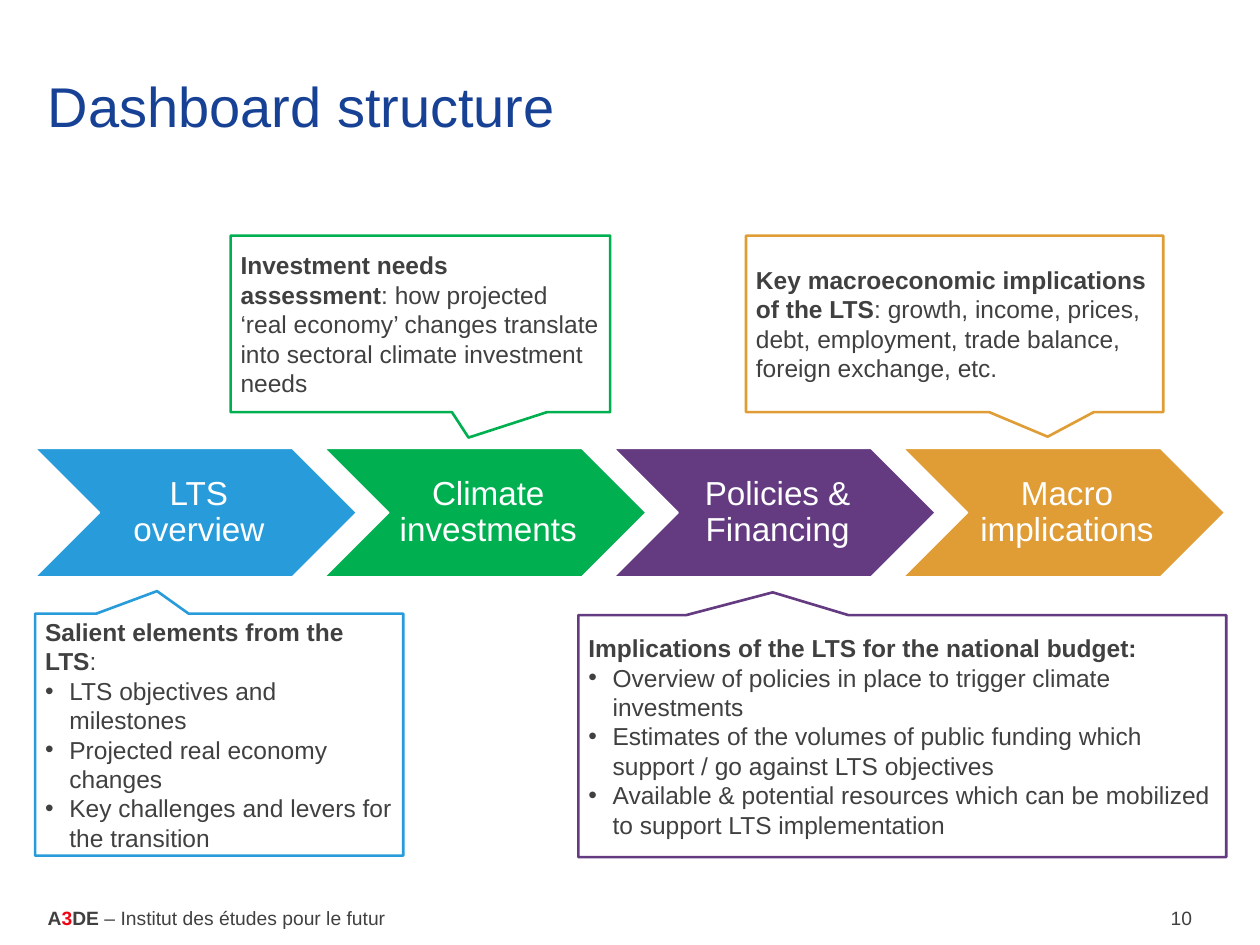
from lxml.etree import SubElement
from pptx import Presentation
from pptx.dml.color import RGBColor
from pptx.enum.shapes import MSO_SHAPE
from pptx.enum.text import MSO_ANCHOR, PP_ALIGN
from pptx.oxml.ns import qn
from pptx.util import Cm, Pt

COLORS = {
    "title": "174195", "text": "404041", "red": "EE0612", "white": "FFFFFF",
    "blue": "289CDB", "green": "00B050", "purple": "643A81", "gold": "E09C35",
}

STEPS = [
    ("LTS overview", "blue"),
    ("Climate investments", "green"),
    ("Policies & Financing", "purple"),
    ("Macro implications", "gold"),
]

# Box (cm), tail offsets, colour, bold lead, plain rest, bullets
NOTES = [
    ((0.71, 12.37, 7.42, 4.88), (-0.169, -0.593), "blue",
     "Salient elements from the LTS", ":",
     ["LTS objectives and milestones",
      "Projected real economy changes",
      "Key challenges and levers for the transition"]),
    ((4.65, 4.75, 7.65, 3.56), (0.127, 0.644), "green",
     "Investment needs assessment",
     ": how projected ‘real economy’ changes translate into sectoral "
     "climate investment needs", []),
    ((15.04, 4.75, 8.41, 3.56), (0.223, 0.639), "gold",
     "Key macroeconomic implications of the LTS",
     ": growth, income, prices, debt, employment, trade balance, "
     "foreign exchange, etc.", []),
    ((11.66, 12.4, 13.06, 4.88), (-0.2, -0.594), "purple",
     "Implications of the LTS for the national budget:", "",
     ["Overview of policies in place to trigger climate investments",
      "Estimates of the volumes of public funding which support / go "
      "against LTS objectives",
      "Available & potential resources which can be mobilized to support "
      "LTS implementation"]),
]


def color(name):
    return RGBColor.from_string(COLORS[name])


def style(run, size, tint="text", bold=False):
    font = run.font
    font.name, font.size, font.bold = "Arial", Pt(size), bold
    font.color.rgb = color(tint)


def add_part(par, text, *look):
    run = par.add_run()
    run.text = text
    style(run, *look)


def set_frame(frame, anchor, pads=None):
    frame.word_wrap = True
    frame.vertical_anchor = anchor
    if pads:
        (frame.margin_left, frame.margin_top,
         frame.margin_right, frame.margin_bottom) = map(Cm, pads)


def add_label(slide, box, anchor=MSO_ANCHOR.MIDDLE):
    frame = slide.shapes.add_textbox(*map(Cm, box)).text_frame
    set_frame(frame, anchor)
    return frame.paragraphs[0]


def add_bullet(par):
    props = par._p.get_or_add_pPr()
    props.set("marL", str(Cm(0.49)))
    props.set("indent", str(-Cm(0.49)))
    SubElement(props, qn("a:buFont"), typeface="Arial")
    SubElement(props, qn("a:buChar"), char="•")


def draw_title(slide, box):
    add_part(add_label(slide, box), "Dashboard structure", 32, "title")


def draw_steps(slide, box):
    left, top, width, height = box
    wide = 6.48
    pitch = (width - wide) / (len(STEPS) - 1)
    for i, (text, tint) in enumerate(STEPS):
        step = slide.shapes.add_shape(
            MSO_SHAPE.CHEVRON, Cm(left + i * pitch), Cm(top),
            Cm(wide), Cm(height))
        step.shadow.inherit = False
        step.fill.solid()
        step.fill.fore_color.rgb = color(tint)
        step.line.color.rgb = color("white")
        step.line.width = Pt(0.85)
        frame = step.text_frame
        set_frame(frame, MSO_ANCHOR.MIDDLE, (0.2, 0.08, 0.08, 0.08))
        frame.text = text
        par = frame.paragraphs[0]
        par.alignment = PP_ALIGN.CENTER
        par.line_spacing = 0.9
        style(par.runs[0], 19, "white")


def draw_note(slide, box, tail, tint, lead, rest, points):
    note = slide.shapes.add_shape(
        MSO_SHAPE.RECTANGULAR_CALLOUT, *map(Cm, box))
    note.adjustments[0], note.adjustments[1] = tail
    note.shadow.inherit = False
    note.fill.background()
    note.line.color.rgb = color(tint)
    note.line.width = Pt(1.5)
    frame = note.text_frame
    set_frame(frame, MSO_ANCHOR.MIDDLE, (0.2,) * 4)
    par = frame.paragraphs[0]
    par.alignment = PP_ALIGN.LEFT
    add_part(par, lead, 14, "text", True)
    if rest:
        add_part(par, rest, 14)
    for point in points:
        par = frame.add_paragraph()
        par.text = point
        par.alignment = PP_ALIGN.LEFT
        add_bullet(par)
        style(par.runs[0], 14)


def draw_footer(slide, box):
    left, top, width, height = box
    name = add_label(slide, (left, top, 8.61, height), MSO_ANCHOR.TOP)
    for text, tint, bold in [
            ("A", "text", True), ("3", "red", True), ("DE ", "text", True),
            ("– Institut des études pour le futur", "text", False)]:
        add_part(name, text, 11, tint, bold)
    page = add_label(slide, (left + width - 1.98, top, 1.98, height))
    page.alignment = PP_ALIGN.RIGHT
    add_part(page, "10", 11)


def main():
    deck = Presentation()
    deck.slide_width, deck.slide_height = Cm(25.4), Cm(19.05)
    slide = deck.slides.add_slide(deck.slide_layouts[6])
    draw_footer(slide, (0.71, 18.14, 23.57, 0.74))
    draw_title(slide, (0.71, 1.12, 24, 2))
    draw_steps(slide, (0.71, 9.04, 23.98, 2.59))
    for note in NOTES:
        draw_note(slide, *note)
    deck.save("out.pptx")


if __name__ == "__main__":
    main()
